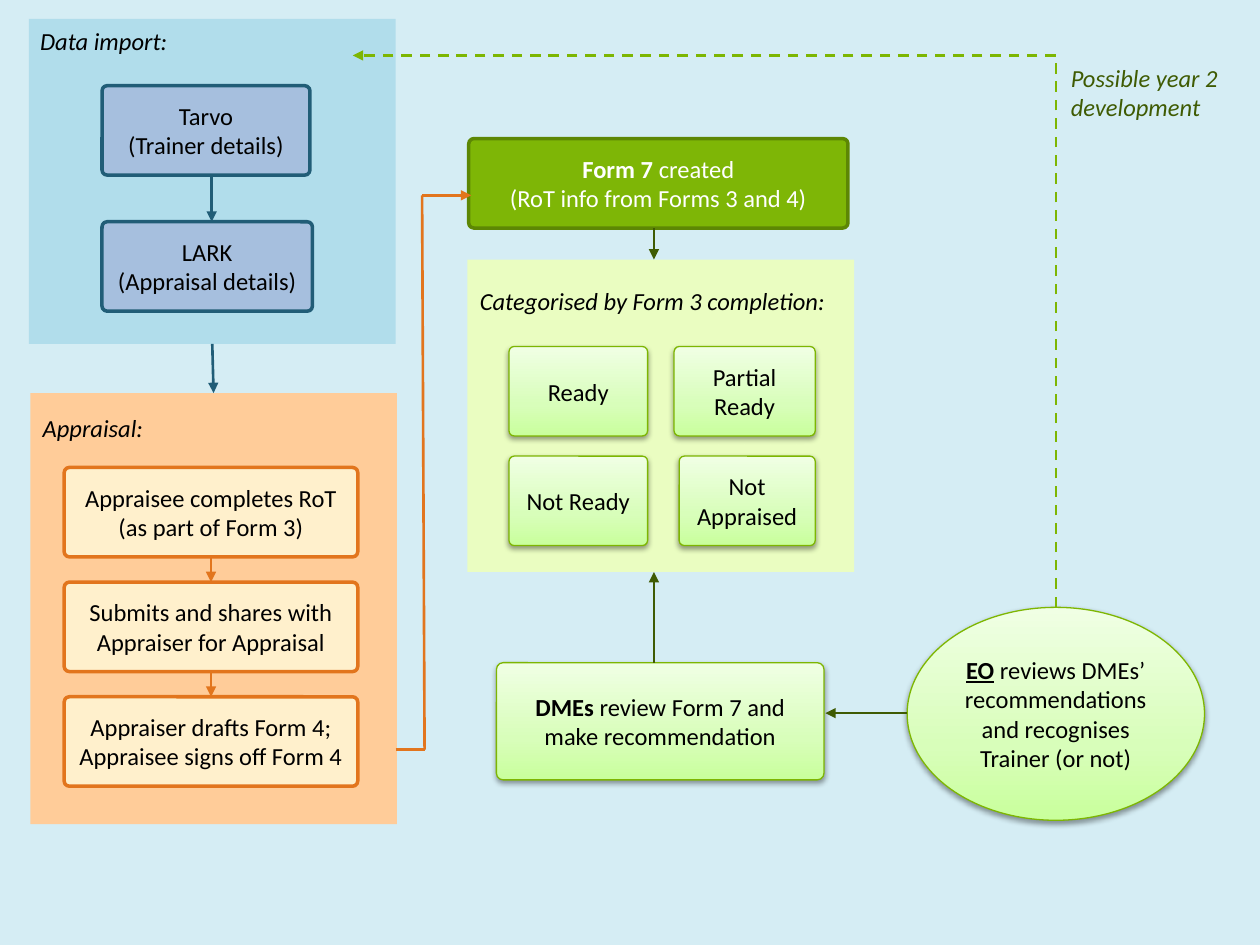
from dataclasses import dataclass
from typing import Optional

from lxml import etree
from pptx import Presentation
from pptx.dml.color import RGBColor
from pptx.enum import dml, shapes, text
from pptx.oxml.ns import qn
from pptx.util import Inches, Pt

HUES = {
    "back": "D5EDF4", "sky": "B1DDEB", "lime": "EAFDC1", "peach": "FFCC99",
    "blue": "A6BFDE", "navy": "215D77", "cream": "FFF0CC", "rust": "E2751D",
    "green": "7EB606", "moss": "5D8704", "leaf": "7DB602", "pine": "3F5B03",
    "black": "000000", "white": "FFFFFF",
}
FADE = [(0, "C9FF9C"), (35, "D8FEBA"), (100, "F0FFE4")]
ROUND = shapes.MSO_SHAPE.ROUNDED_RECTANGLE
OVAL = shapes.MSO_SHAPE.OVAL
RECT = shapes.MSO_SHAPE.RECTANGLE
TOP, BASE = 0, 2


@dataclass
class Style:
    fill: Optional[str]  # None means the green fade with a shadow
    line: str
    width: float = 2
    ink: str = "black"


@dataclass
class Box:
    """Each line holds (text, marks) runs; marks may contain b, i and u."""
    area: tuple
    lines: list
    style: Style
    form: int = ROUND


@dataclass
class Link:
    start: tuple
    end: tuple
    hue: str
    arrow: bool = True
    dash: bool = False
    source: object = None
    target: object = None


BLUE = Style("blue", "navy")
CREAM = Style("cream", "rust")
FORM = Style("green", "moss", ink="white")
PALE = Style(None, "leaf", 0.75)


def rgb(name: str) -> RGBColor:
    return RGBColor.from_string(HUES[name])


def place(area: tuple) -> list:
    return [Inches(n) for n in area]


def write(frame, lines: list, ink: str, align) -> None:
    frame.word_wrap = True
    for n, line in enumerate(lines):
        para = frame.paragraphs[0] if n == 0 else frame.add_paragraph()
        para.alignment = align
        for words, marks in line:
            run = para.add_run()
            run.text = words
            font = run.font
            font.name, font.size = "Calibri", Pt(14)
            font.color.rgb = rgb(ink)
            font.bold, font.italic = "b" in marks, "i" in marks
            font.underline = "u" in marks


def fade(shape) -> None:
    """Give a shape the upward green gradient and a soft shadow."""
    shape.fill.gradient()
    shape.fill.gradient_angle = 90
    props = shape._element.spPr
    stops = props.find(qn("a:gradFill")).find(qn("a:gsLst"))
    for old in list(stops):
        stops.remove(old)
    for pos, hue in FADE:
        stop = etree.SubElement(stops, qn("a:gs"), pos=str(pos * 1000))
        etree.SubElement(stop, qn("a:srgbClr"), val=hue)
    cast = etree.SubElement(
        props.find(qn("a:effectLst")), qn("a:outerShdw"), blurRad="40000",
        dist="20000", dir="5400000", rotWithShape="0")
    tint = etree.SubElement(cast, qn("a:srgbClr"), val=HUES["black"])
    etree.SubElement(tint, qn("a:alpha"), val="38000")


def panel(slide, area: tuple, hue: str):
    shape = slide.shapes.add_shape(RECT, *place(area))
    shape.shadow.inherit = False
    shape.fill.solid()
    shape.fill.fore_color.rgb = rgb(hue)
    shape.line.fill.background()
    return shape


def draw(slide, box: Box):
    shape = slide.shapes.add_shape(box.form, *place(box.area))
    shape.shadow.inherit = False
    if box.form == ROUND:
        shape.adjustments[0] = 0.058
    style = box.style
    if style.fill:
        shape.fill.solid()
        shape.fill.fore_color.rgb = rgb(style.fill)
    else:
        fade(shape)
    shape.line.color.rgb = rgb(style.line)
    shape.line.width = Pt(style.width)
    shape.text_frame.vertical_anchor = text.MSO_ANCHOR.MIDDLE
    write(shape.text_frame, box.lines, style.ink, text.PP_ALIGN.CENTER)
    return shape


def label(slide, area: tuple, words: str, ink: str = "black") -> None:
    frame = slide.shapes.add_textbox(*place(area)).text_frame
    write(frame, [[(words, "i")]], ink, text.PP_ALIGN.LEFT)
    frame.auto_size = text.MSO_AUTO_SIZE.SHAPE_TO_FIT_TEXT


def join(slide, link: Link) -> None:
    wire = slide.shapes.add_connector(
        shapes.MSO_CONNECTOR.STRAIGHT, *place(link.start + link.end))
    if link.source is not None:
        wire.begin_connect(link.source, TOP if link.dash else BASE)
    if link.target is not None:
        wire.end_connect(link.target, TOP)
    wire.line.color.rgb = rgb(link.hue)
    wire.line.width = Pt(1.5)
    if link.dash:
        wire.line.dash_style = dml.MSO_LINE.DASH
    if link.arrow:
        etree.SubElement(wire.line._get_or_add_ln(), qn("a:tailEnd"),
                         type="triangle")
    etree.SubElement(wire._element.spPr, qn("a:effectLst"))


def main() -> None:
    deck = Presentation()
    deck.slide_width, deck.slide_height = Inches(10), Inches(7.5)
    slide = deck.slides.add_slide(deck.slide_layouts[6])
    slide.background.fill.solid()
    slide.background.fill.fore_color.rgb = rgb("back")

    data = panel(slide, (0.23, 0.15, 2.91, 2.58), "sky")
    panel(slide, (3.71, 2.06, 3.07, 2.48), "lime")
    review = panel(slide, (0.24, 3.12, 2.91, 3.42), "peach")

    for top, wide, name, note in [(0.68, 1.65, "Tarvo", "(Trainer details)"),
                                  (1.76, 1.67, "LARK", "(Appraisal details)")]:
        draw(slide, Box((0.81, top, wide, 0.71),
                        [[(name, "")], [(note, "")]], BLUE))

    steps = [
        draw(slide, Box((0.51, 3.71 + 0.91 * n, 2.33, 0.71),
                        [[(words, "")]], CREAM))
        for n, words in enumerate([
            "Appraisee completes RoT (as part of Form 3)",
            "Submits and shares with Appraiser for Appraisal",
            "Appraiser drafts Form 4; Appraisee signs off Form 4"])]

    draw(slide, Box((3.72, 1.1, 3.01, 0.71),
                    [[("Form 7 ", "b"), ("created", "")],
                     [("(RoT info from Forms 3 and 4)", "")]], FORM))
    for left, top, wide, words in [
            (4.04, 2.75, 1.1, "Ready"), (5.35, 2.75, 1.12, "Partial Ready"),
            (4.04, 3.62, 1.1, "Not Ready"), (5.39, 3.62, 1.08, "Not Appraised")]:
        draw(slide, Box((left, top, wide, 0.71), [[(words, "")]], PALE))
    draw(slide, Box((3.94, 5.26, 2.6, 0.93),
                    [[("DMEs", "b"),
                      (" review Form 7 and make recommendation", "")]], PALE))
    judge = draw(slide, Box(
        (7.2, 4.82, 2.36, 1.69),
        [[("EO", "bu"), (" ", "b"),
          ("reviews DMEs’ recommendations and recognises Trainer (or not)", "")]],
        PALE, OVAL))

    links = [
        Link((1.68, 1.39), (1.68, 1.76), "navy"),
        Link((1.68, 2.73), (1.68, 3.12), "navy", source=data, target=review),
        *[Link((1.68, 4.42), (1.68, 4.62), "rust", source=one, target=two)
          for one, two in zip(steps, steps[1:])],
        Link((3.35, 1.55), (3.74, 1.55), "rust"),
        Link((3.14, 5.95), (3.37, 5.95), "rust", arrow=False),
        Link((3.35, 1.55), (3.37, 5.95), "rust", arrow=False),
        Link((5.19, 1.81), (5.19, 2.06), "pine"),
        Link((5.19, 5.26), (5.19, 4.54), "pine"),
        Link((7.2, 5.66), (6.55, 5.66), "pine"),
        Link((8.38, 4.82), (8.38, 0.44), "leaf", False, True, source=judge),
        Link((8.38, 0.44), (2.8, 0.44), "leaf", dash=True),
    ]
    for link in links:
        join(slide, link)

    label(slide, (0.24, 3.23, 2.91, 0.34), "Appraisal:")
    label(slide, (3.71, 2.22, 3.07, 0.34), "Categorised by Form 3 completion:")
    label(slide, (8.4, 0.45, 1.52, 0.57), "Possible year 2 development", "pine")
    label(slide, (0.22, 0.16, 2.91, 0.34), "Data import:")
    deck.save("out.pptx")


if __name__ == "__main__":
    main()
